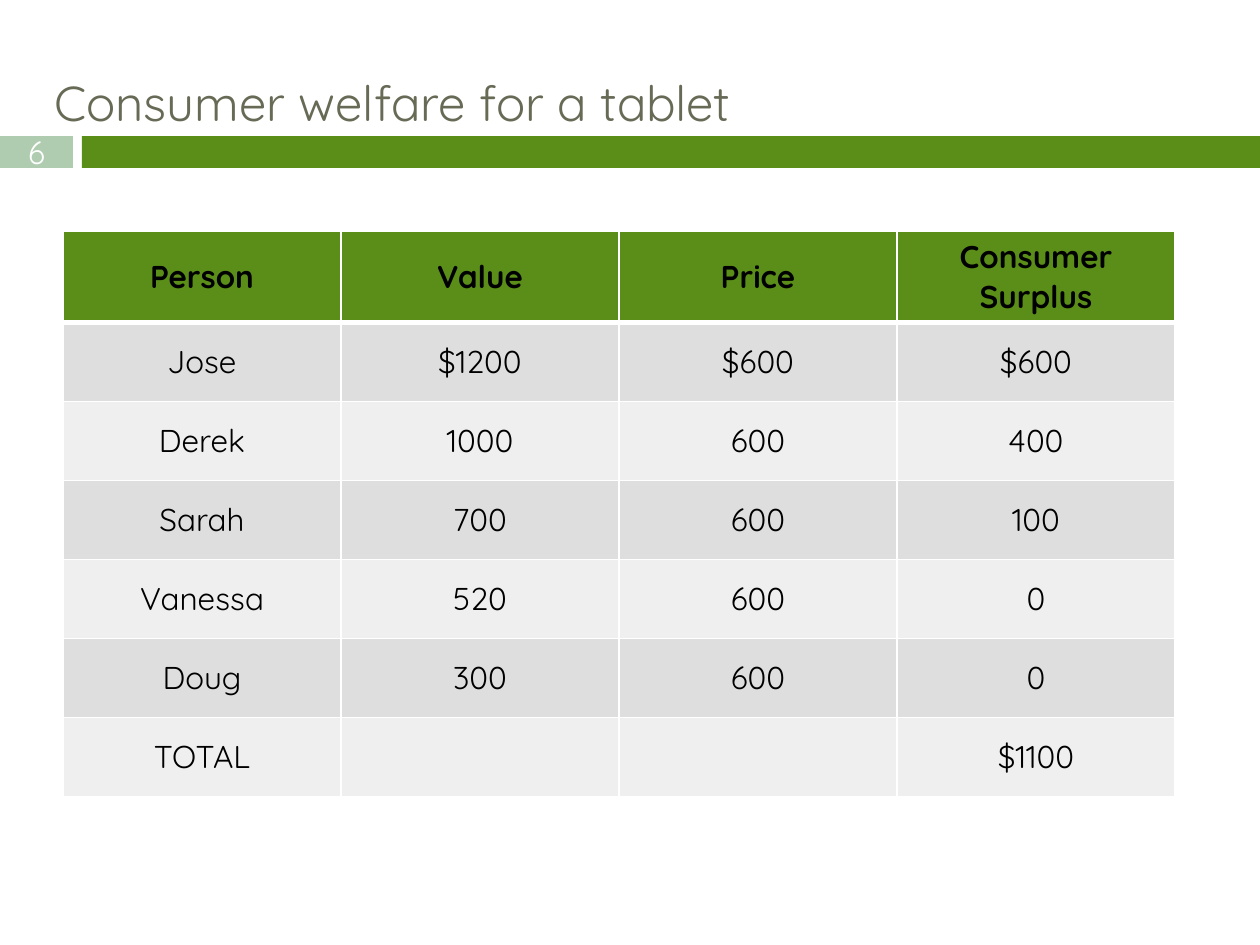
from lxml import etree
from pptx import Presentation
from pptx.dml.color import RGBColor
from pptx.enum.shapes import MSO_SHAPE
from pptx.enum.text import MSO_ANCHOR, PP_ALIGN
from pptx.oxml.ns import qn
from pptx.util import Emu, Pt

RECT = MSO_SHAPE.RECTANGLE
TOP, MIDDLE = MSO_ANCHOR.TOP, MSO_ANCHOR.MIDDLE
LEFT, CENTER = PP_ALIGN.LEFT, PP_ALIGN.CENTER

FONT = "Quicksand"
GREEN, SAGE, OLIVE = "5A8E19", "B0CCB0", "676A55"
WHITE, BLACK = "FFFFFF", "000000"
BANDS = ("DEDEDE", "EFEFEF")

TITLE = "Consumer welfare for a tablet"
NUMBER = "6"
ROWS = [
    ("Person", "Value", "Price", "Consumer Surplus"),
    ("Jose", "$1200", "$600", "$600"),
    ("Derek", "1000", "600", "400"),
    ("Sarah", "700", "600", "100"),
    ("Vanessa", "520", "600", "0"),
    ("Doug", "300", "600", "0"),
    ("TOTAL", "", "", "$1100"),
]
COL_W, ROW_H = 278, 79


def px(n):
    return Emu(n * 914400 // 126)


def rgb(code):
    return RGBColor.from_string(code)


def style(par, size, color, align=CENTER, bold=False):
    par.alignment = align
    font = par.font
    font.name, font.size, font.bold = FONT, Pt(size), bold
    font.color.rgb = rgb(color)


def add_bar(slide, x, width, color):
    bar = slide.shapes.add_shape(RECT, px(x), px(136), px(width), px(32))
    bar.shadow.inherit = False
    bar.fill.solid()
    bar.fill.fore_color.rgb = rgb(color)
    bar.line.fill.background()
    return bar


def add_edges(cell, top, bottom):
    """Draw white borders; top and bottom are widths in points."""
    props = cell._tc.get_or_add_tcPr()
    widths = {"lnL": 1, "lnR": 1, "lnT": top, "lnB": bottom}
    for spot, (tag, width) in enumerate(widths.items()):
        line = etree.Element(qn(f"a:{tag}"), w=str(Pt(width)))
        fill = etree.SubElement(line, qn("a:solidFill"))
        etree.SubElement(fill, qn("a:srgbClr"), val=WHITE)
        props.insert(spot, line)


def add_grid(slide):
    rows, cols = len(ROWS), len(ROWS[0])
    grid = slide.shapes.add_table(
        rows, cols, px(63), px(231), px(cols * COL_W), px(rows * ROW_H)
    ).table
    for col in grid.columns:
        col.width = px(COL_W)
    for r, row in enumerate(ROWS):
        grid.rows[r].height = px(ROW_H)
        head = r == 0
        for c, text in enumerate(row):
            cell = grid.cell(r, c)
            cell.text = text
            cell.vertical_anchor = MIDDLE
            cell.fill.solid()
            cell.fill.fore_color.rgb = rgb(GREEN if head else BANDS[(r - 1) % 2])
            style(cell.text_frame.paragraphs[0], 18, BLACK, bold=head)
            add_edges(cell, 3 if r == 1 else 1, 3 if head else 1)


def main():
    deck = Presentation()
    deck.slide_width, deck.slide_height = px(1260), px(945)
    slide = deck.slides.add_slide(deck.slide_layouts[5])

    badge = add_bar(slide, 0, 73, SAGE)
    frame = badge.text_frame
    frame.margin_left = frame.margin_right = 0
    frame.margin_top = frame.margin_bottom = 0
    frame.vertical_anchor = MIDDLE
    frame.text = NUMBER
    style(frame.paragraphs[0], 18, WHITE)
    add_bar(slide, 82, 1178, GREEN)

    title = slide.shapes.title
    title.left, title.top = px(42), px(66)
    title.width, title.height = px(1239), px(82)
    title.text_frame.text = TITLE
    title.text_frame.vertical_anchor = TOP
    style(title.text_frame.paragraphs[0], 28, OLIVE, LEFT)

    add_grid(slide)
    deck.save("out.pptx")


if __name__ == "__main__":
    main()
